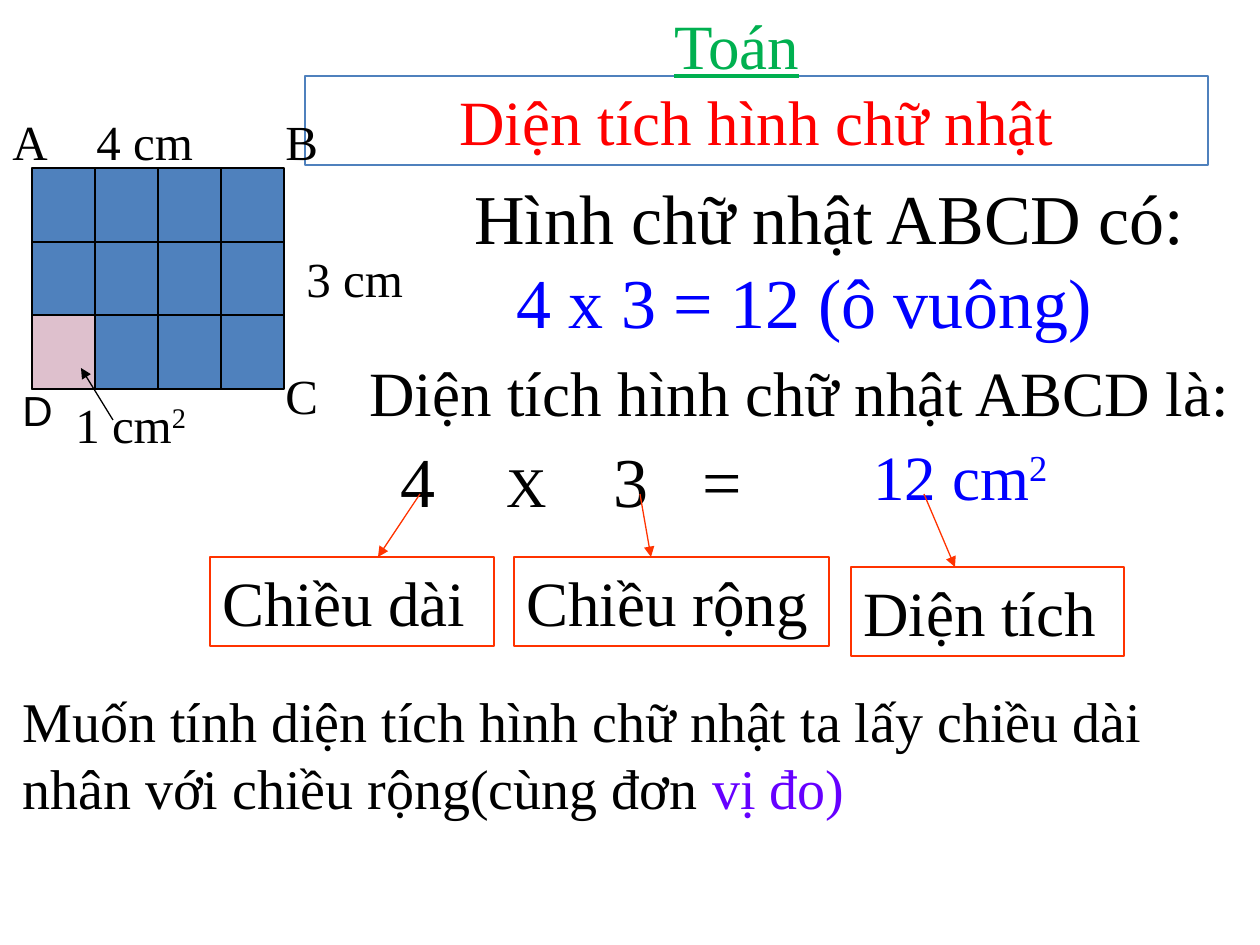
import pptx
import pptx.util
import pptx.dml.color
import pptx.enum.shapes
import pptx.enum.text
import pptx.oxml.ns
from lxml import etree

PX = 914400 / 126
SERIF = "Times New Roman"
COLORS = {
    "black": "000000",
    "blue": "0000FF",
    "green": "00B050",
    "red": "FF0000",
    "orange": "FF3300",
    "violet": "6600FF",
    "steel": "4F81BD",
    "pink": "DEC0CD",
}
RECT = pptx.enum.shapes.MSO_SHAPE.RECTANGLE
ALIGN = pptx.enum.text.PP_ALIGN


def px(*lengths):
    return [pptx.util.Emu(round(n * PX)) for n in lengths]


def rgb(color):
    return pptx.dml.color.RGBColor.from_string(COLORS[color])


def sub(parent, tag, **attrs):
    return etree.SubElement(parent, pptx.oxml.ns.qn(tag), **attrs)


def format_run(r, size, color="black", font=SERIF):
    r.font.size = pptx.util.Pt(size)
    r.font.name = font
    r.font.color.rgb = rgb(color)


def write(sp, text, size, color="black", font=SERIF, align=ALIGN.LEFT):
    """Put one wrapped, top-anchored paragraph in a shape."""
    tf = sp.text_frame
    tf.word_wrap = True
    tf.auto_size = pptx.enum.text.MSO_AUTO_SIZE.NONE
    tf.vertical_anchor = pptx.enum.text.MSO_ANCHOR.TOP
    p = tf.paragraphs[0]
    p.text = text
    p.alignment = align
    format_run(p.runs[0], size, color, font)
    return p


def add_run(p, text, size, color="black"):
    r = p.add_run()
    r.text = text
    format_run(r, size, color)
    return r


def add_superscript(p, text, size, color="black"):
    r = add_run(p, text, size, color)
    r._r.get_or_add_rPr().set("baseline", "30000")


def add_label(slide, box, text, size, color="black", font=SERIF):
    sp = slide.shapes.add_textbox(*px(*box))
    return write(sp, text, size, color, font)


def set_outline(sp, color):
    sp.line.color.rgb = rgb(color)
    sp.line.width = pptx.util.Pt(0.75)


def add_box(slide, box, line, fill=None):
    sp = slide.shapes.add_shape(RECT, *px(*box))
    sp.shadow.inherit = False
    set_outline(sp, line)
    if fill:
        sp.fill.solid()
        sp.fill.fore_color.rgb = rgb(fill)
    else:
        sp.fill.background()
    return sp


def add_line(slide, start, end, color="black", arrow=False):
    straight = pptx.enum.shapes.MSO_CONNECTOR.STRAIGHT
    line = slide.shapes.add_connector(straight, *px(*start, *end))
    set_outline(line, color)
    if arrow:
        sub(line.line._get_or_add_ln(), "a:tailEnd", type="triangle")
    sub(line._element.spPr, "a:effectLst")
    return line


def add_grid(slide, left, top, width, height, cols, rows):
    """Rectangle ABCD cut into unit squares, the bottom-left one tinted."""
    xs = [left + round(width * i / cols) for i in range(cols + 1)]
    ys = [top + round(height * i / rows) for i in range(rows + 1)]
    rect = add_box(slide, (left, top, width, height), "black", "steel")
    for i, x in enumerate(xs[1:-1], 1):
        line = add_line(slide, (x, ys[0]), (x, ys[-1]))
        if 2 * i == cols:
            line.begin_connect(rect, 0)
            line.end_connect(rect, 2)
    for y in ys[1:-1]:
        add_line(slide, (xs[0], y), (xs[-1], y))
    add_box(slide, (left, ys[-2], xs[1] - left, ys[-1] - ys[-2]), "black", "pink")


def add_product(slide, box, factors, stops):
    """The multiplication, its terms set on tab stops."""
    p = add_label(slide, box, factors[0][0], factors[0][1])
    for text, size in factors[1:]:
        add_run(p, "\t" + text, size)
    tabs = sub(p._p.get_or_add_pPr(), "a:tabLst")
    for pos in px(*stops):
        sub(tabs, "a:tab", pos=str(int(pos)), algn="l")


def add_title(slide, box, text):
    sp = slide.shapes.title
    sp.left, sp.top, sp.width, sp.height = px(*box)
    set_outline(sp, "steel")
    write(sp, text, 36, "red", align=ALIGN.CENTER)


def main():
    prs = pptx.Presentation()
    prs.slide_width, prs.slide_height = px(1260, 945)
    slide = prs.slides.add_slide(prs.slide_layouts[5])

    # Heading
    p = add_label(slide, (662, 0, 315, 88), "Toán", 36, "green")
    p.runs[0].font.underline = True
    add_title(slide, (305, 76, 903, 89), "Diện tích hình chữ nhật")

    # Rectangle ABCD with its corners and sides
    add_grid(slide, 32, 168, 252, 221, cols=4, rows=3)
    for text, x, y, width in [
        ("A", 0, 105, 84),
        ("B", 273, 105, 84),
        ("C", 273, 359, 84),
        ("4 cm", 84, 105, 158),
        ("3 cm", 294, 242, 158),
    ]:
        add_label(slide, (x, y, width, 72), text, 28)
    add_label(slide, (10, 378, 84, 63), "D", 24, font="Arial")
    add_line(slide, (113, 420), (81, 368), arrow=True)
    p = add_label(slide, (63, 388, 187, 72), "1 cm", 28)
    add_superscript(p, "2", 28)

    # Calculation
    add_label(slide, (462, 168, 746, 97), "Hình chữ nhật ABCD có:", 40)
    add_label(slide, (504, 252, 651, 97), "4 x 3 = 12 (ô vuông)", 40, "blue")
    add_label(slide, (357, 347, 903, 88), "Diện tích hình chữ nhật ABCD là:", 36)
    add_product(slide, (388, 431, 378, 97),
                [("4", 40), ("X", 32), ("3", 40), ("=", 40)], (106, 213, 302))
    p = add_label(slide, (861, 431, 221, 88), "12 cm", 36, "blue")
    add_superscript(p, "2", 36, "blue")

    # Names of the terms, each with its arrow
    for text, box, start, tip in [
        ("Chiều dài", (210, 557, 284, 89), 420, 378),
        ("Chiều rộng", (514, 557, 315, 89), 640, 651),
        ("Diện tích", (851, 567, 273, 89), 924, 955),
    ]:
        write(add_box(slide, box, "orange"), text, 36)
        add_line(slide, (start, 494), (tip, box[1]), "orange", arrow=True)

    # Rule
    p = add_label(slide, (10, 680, 1250, 149),
                  "Muốn tính diện tích hình chữ nhật ta lấy chiều dài "
                  "nhân với chiều rộng(cùng đơn ", 32)
    add_run(p, "vị đo)", 32, "violet")

    prs.save("out.pptx")


if __name__ == "__main__":
    main()
